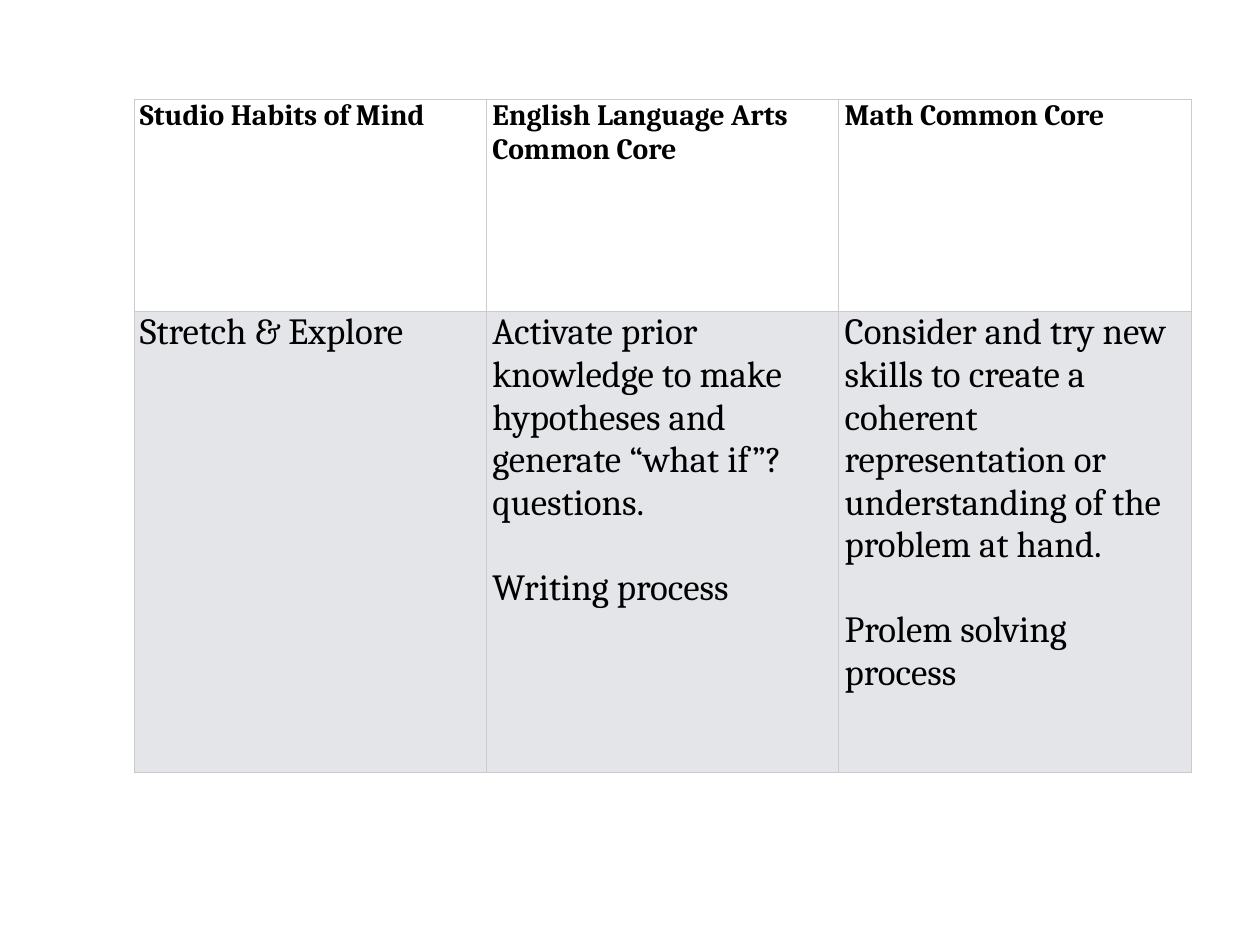
"""Build a slide with a table linking studio habits to common core subjects."""
from dataclasses import dataclass

from lxml import etree
from pptx import Presentation
from pptx import util as u
from pptx.dml.color import RGBColor
from pptx.oxml.ns import qn


@dataclass(frozen=True)
class Theme:
    font: str = "Cambria"
    ink: str = "000000"
    border: str = "CBCBCB"
    border_width: float = 0.5
    header_fill: str = "FFFFFF"
    body_fill: str = "E3E5E8"
    header_size: float = 24
    body_size: float = 30
    paragraph_gap: float = 34.5


THEME = Theme()
HEADERS = ["Studio Habits of Mind", "English Language Arts Common Core", "Math Common Core"]
HABIT = [
    "Stretch & Explore",
    "Activate prior knowledge to make hypotheses and generate “what if”? questions.\n"
    "Writing process",
    "Consider and try new skills to create a coherent representation or "
    "understanding of the problem at hand.\n"
    "Prolem solving process",
]


def set_borders(cell):
    tcPr = cell._tc.get_or_add_tcPr()
    for side in ("a:lnL", "a:lnR", "a:lnT", "a:lnB"):
        ln = etree.SubElement(tcPr, qn(side), w=str(u.Pt(THEME.border_width)))
        fill = etree.SubElement(ln, qn("a:solidFill"))
        etree.SubElement(fill, qn("a:srgbClr"), val=THEME.border)


def fill_cell(cell, content, size, fill, bold):
    cell.margin_left = cell.margin_right = u.Inches(0.07)
    cell.margin_top = cell.margin_bottom = 0
    set_borders(cell)
    cell.fill.solid()
    cell.fill.fore_color.rgb = RGBColor.from_string(fill)
    tf = cell.text_frame
    tf.text = content
    for i, p in enumerate(tf.paragraphs):
        p.font.name = THEME.font
        p.font.size = u.Pt(size)
        p.font.bold = bold
        p.font.color.rgb = RGBColor.from_string(THEME.ink)
        p.space_before = u.Pt(THEME.paragraph_gap if i else 0)


def fill_row(row, contents, height, size, fill, bold=False):
    row.height = u.Inches(height)
    for cell, content in zip(row.cells, contents):
        fill_cell(cell, content, size, fill, bold)


def add_habits_table(s):
    frame = s.shapes.add_table(
        2, len(HEADERS), u.Inches(1.51), u.Inches(1.12), u.Inches(11.93), u.Inches(7.6)
    )
    table = frame.table
    table.horz_banding = False
    fill_row(table.rows[0], HEADERS, 2.4, THEME.header_size, THEME.header_fill, bold=True)
    fill_row(table.rows[1], HABIT, 5.2, THEME.body_size, THEME.body_fill)


def main():
    prs = Presentation()
    prs.slide_width, prs.slide_height = u.Inches(14.22), u.Inches(10.67)
    s = prs.slides.add_slide(prs.slide_layouts[6])
    add_habits_table(s)
    prs.save("out.pptx")


if __name__ == "__main__":
    main()
